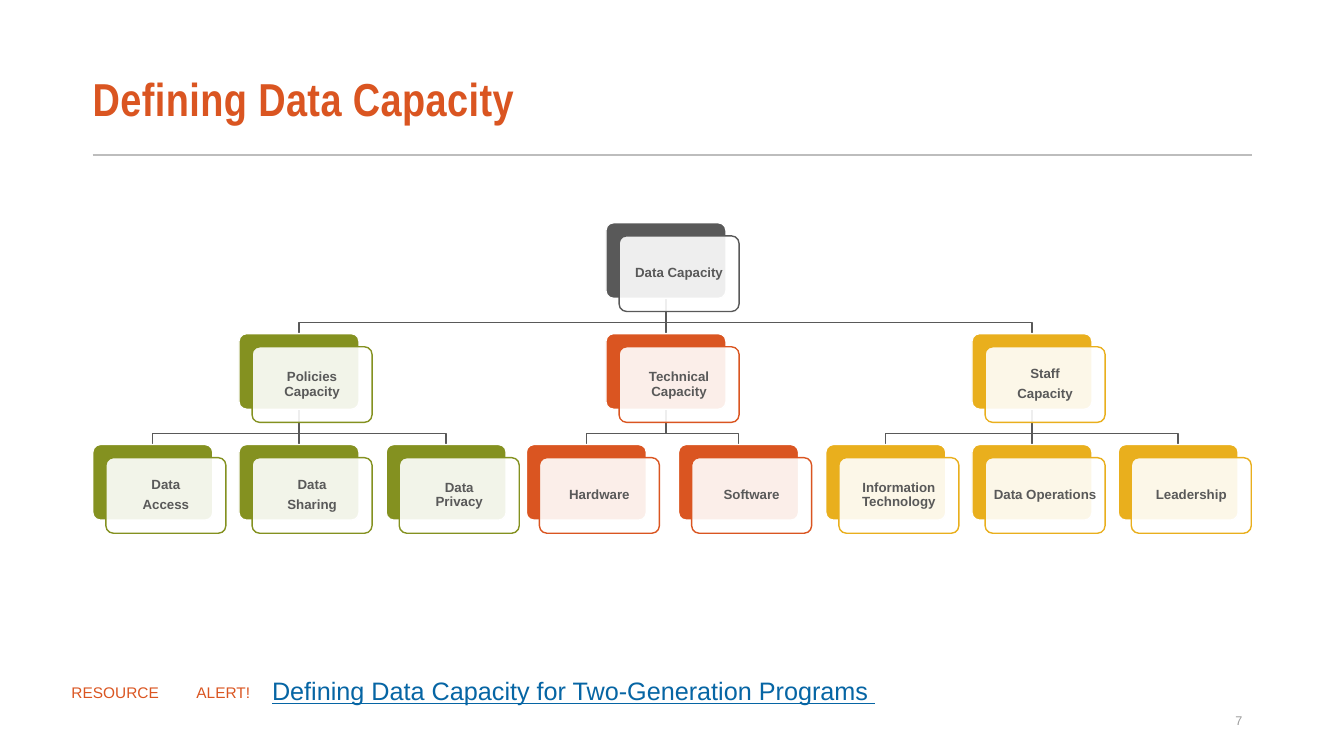
from lxml import etree
from pptx import Presentation
from pptx.dml.color import RGBColor
from pptx.enum.shapes import MSO_CONNECTOR, MSO_SHAPE
from pptx.enum.text import MSO_ANCHOR, PP_ALIGN
from pptx.oxml.ns import qn
from pptx.util import Inches, Pt

ROUNDED = MSO_SHAPE.ROUNDED_RECTANGLE
STRAIGHT = MSO_CONNECTOR.STRAIGHT
MIDDLE = MSO_ANCHOR.MIDDLE
LEFT, CENTER, RIGHT = PP_ALIGN.LEFT, PP_ALIGN.CENTER, PP_ALIGN.RIGHT

COLORS = {
    "white": "FFFFFF",
    "gray": "595959",
    "rule": "BDBDBD",
    "number": "9B9B9B",
    "green": "849120",
    "orange": "DA5521",
    "yellow": "E9AF1D",
    "link": "0665A4",
}

CARD_W, CARD_H = 1.19, 0.75
CARD_OFFSET = 0.13
ROW_TOPS = [2.21, 3.31, 4.41]
BEND_DROP = 0.24

# Each card: left edge, lines of its label, gap in points between the lines
ROOT = (6.01, ["Data Capacity"], 0)
BRANCHES = [
    ("green", (2.37, ["Policies Capacity"], 0), [
        (0.92, ["Data", "Access"], 4),
        (2.37, ["Data", "Sharing"], 4),
        (3.83, ["Data", "Privacy"], 0),
    ]),
    ("orange", (6.01, ["Technical Capacity"], 0), [
        (5.22, ["Hardware"], 0),
        (6.73, ["Software"], 0),
    ]),
    ("yellow", (9.64, ["Staff", "Capacity"], 4), [
        (8.19, ["Information Technology"], 0),
        (9.64, ["Data Operations"], 0),
        (11.09, ["Leadership"], 0),
    ]),
]


def rgb(name):
    return RGBColor.from_string(COLORS[name])


def write(frame, lines, size, color, align=LEFT, font="Arial", bold=False):
    """Fill a text frame with one paragraph per line and format its runs."""
    frame.word_wrap = True
    frame.vertical_anchor = MIDDLE
    frame.text = "\n".join(lines)
    for paragraph in frame.paragraphs:
        paragraph.alignment = align
        for run in paragraph.runs:
            run.font.name = font
            run.font.size = Pt(size)
            run.font.bold = bold
            run.font.color.rgb = rgb(color)


prs = Presentation()
prs.slide_width, prs.slide_height = Inches(13.33), Inches(7.5)
slide = prs.slides.add_slide(prs.slide_layouts[6])
shapes = slide.shapes

# Title, rule and slide number
title = shapes.add_textbox(Inches(0.92), Inches(0.54), Inches(11.5), Inches(0.94)).text_frame
title.margin_left = 0
write(title, ["Defining Data Capacity"], 33, "orange", font="Arial Narrow", bold=True)
title.paragraphs[0].line_spacing = 0.87
title.paragraphs[0].runs[0].font._element.set("spc", "30")

title_rule = shapes.add_connector(STRAIGHT, Inches(0.92), Inches(1.54), Inches(12.42), Inches(1.54))
title_rule.line.color.rgb = rgb("rule")
title_rule.line.width = Pt(1.5)
etree.SubElement(title_rule._element.spPr, qn("a:effectLst"))

number = shapes.add_textbox(Inches(9.42), Inches(6.95), Inches(3), Inches(0.4)).text_frame
write(number, ["7"], 9, "number", RIGHT)

# Collect the cards and the links between them
cards = [(0, "gray", ROOT)]
links = []
for color, branch, leaves in BRANCHES:
    cards.append((1, color, branch))
    links.append((0, ROOT[0], branch[0]))
    for leaf in leaves:
        cards.append((2, color, leaf))
        links.append((1, branch[0], leaf[0]))

# Links lie behind the cards
for level, parent_left, child_left in links:
    parent_x, child_x = (Inches(left + CARD_W / 2) for left in (parent_left, child_left))
    start_y = Inches(ROW_TOPS[level] + CARD_H)
    bend_y = Inches(ROW_TOPS[level] + CARD_H + BEND_DROP)
    end_y = Inches(ROW_TOPS[level + 1])
    if parent_x == child_x:
        link = shapes.add_connector(STRAIGHT, parent_x, start_y, child_x, end_y)
        etree.SubElement(link._element.spPr, qn("a:effectLst"))
    else:
        elbow = shapes.build_freeform(parent_x, start_y)
        elbow.add_line_segments(
            [(parent_x, bend_y), (child_x, bend_y), (child_x, end_y)], close=False)
        link = elbow.convert_to_shape()
        link.fill.background()
        link.shadow.inherit = False
    link.line.color.rgb = rgb("gray")
    link.line.width = Pt(1)

# Each card is a solid back plate with a translucent label plate in front
for level, color, (left, lines, gap) in cards:
    for offset, fill, outline in ((0, color, "white"), (CARD_OFFSET, "white", color)):
        plate = shapes.add_shape(
            ROUNDED, Inches(left + offset), Inches(ROW_TOPS[level] + offset),
            Inches(CARD_W), Inches(CARD_H))
        plate.adjustments[0] = 0.1
        plate.shadow.inherit = False
        plate.fill.solid()
        plate.fill.fore_color.rgb = rgb(fill)
        plate.line.color.rgb = rgb(outline)
        plate.line.width = Pt(1)

    fill_color = plate._element.spPr.find(qn("a:solidFill")).find(qn("a:srgbClr"))
    etree.SubElement(fill_color, qn("a:alpha"), val="90000")
    label = plate.text_frame
    label.margin_left = label.margin_right = Inches(0.06)
    label.margin_top = label.margin_bottom = Inches(0.04)
    write(label, lines, 9.5, "gray", CENTER, bold=True)
    for paragraph in label.paragraphs:
        paragraph.line_spacing = 0.9
    for paragraph in label.paragraphs[:-1]:
        paragraph.space_after = Pt(gap)

# Resource line
resource = shapes.add_textbox(Inches(2.6), Inches(6.6), Inches(9.56), Inches(0.5)).text_frame
write(resource, ["Defining Data Capacity for Two-Generation Programs "], 18, "link")
resource.paragraphs[0].runs[0].font.underline = True

alert = shapes.add_textbox(Inches(0.61), Inches(6.72), Inches(2.25), Inches(0.29)).text_frame
write(alert, ["RESOURCE\tALERT!"], 11, "orange")
tabs = etree.SubElement(alert.paragraphs[0]._p.get_or_add_pPr(), qn("a:tabLst"))
etree.SubElement(tabs, qn("a:tab"), pos=str(Inches(1.24)), algn="l")

prs.save("out.pptx")
